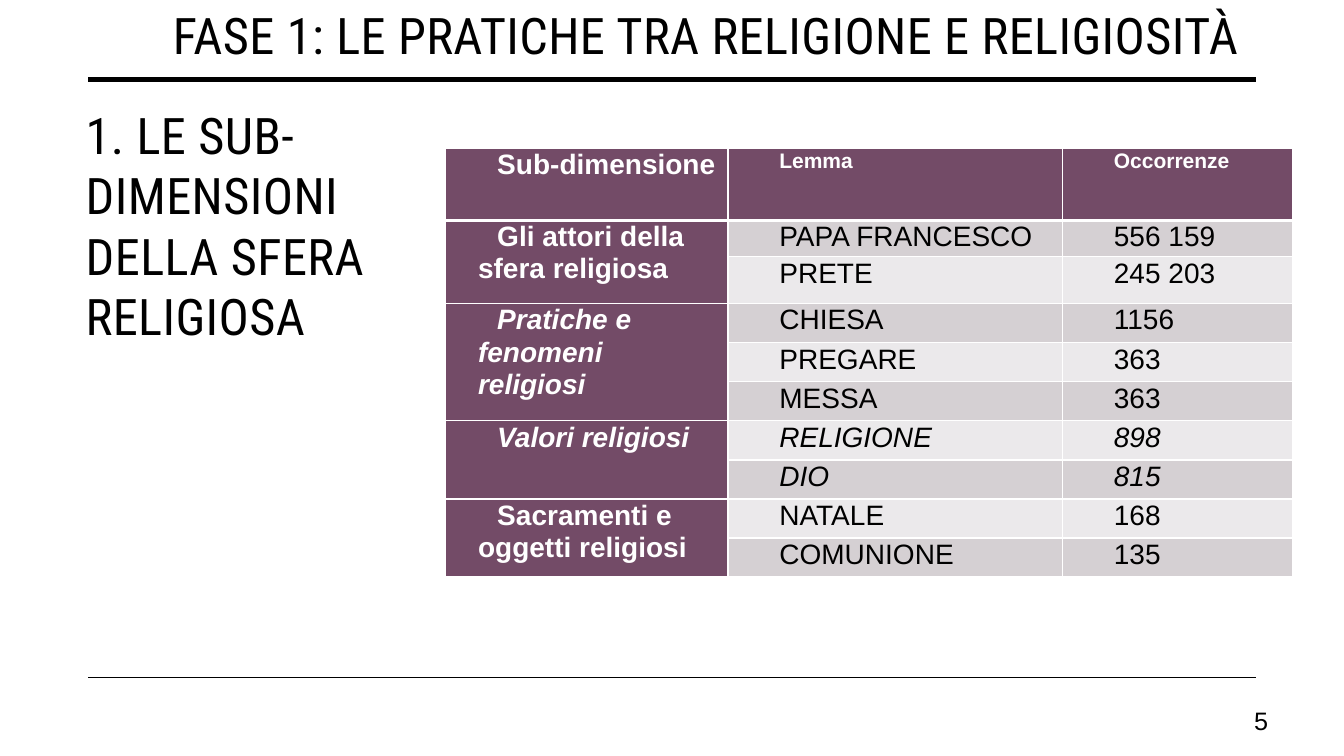
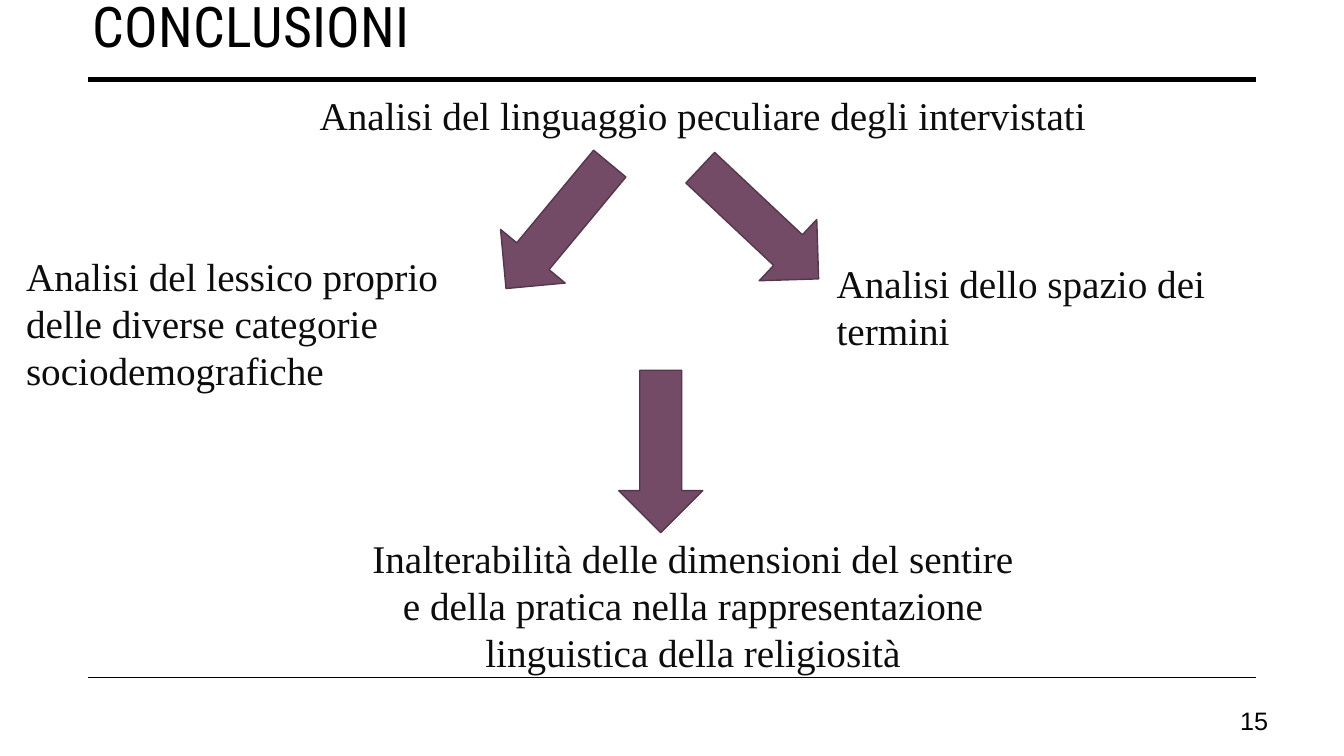
from lxml import etree
from pptx import Presentation
from pptx.dml.color import RGBColor
from pptx.enum import shapes, text
from pptx.oxml import ns
from pptx.util import Pt

COLORS = {"black": "000000", "ink": "0D0D0D", "white": "FFFFFF", "plum": "734B67",
          "plum_edge": "55374C", "band_dark": "D5D0D3", "band_light": "EBE9EB"}
HEADING, BODY, SERIF = "Roboto Condensed", "Arial", "Times New Roman"
LEFT, CENTER, RIGHT, JUSTIFY = (text.PP_ALIGN.LEFT, text.PP_ALIGN.CENTER,
                                text.PP_ALIGN.RIGHT, text.PP_ALIGN.JUSTIFY)

# y position and weight of the lines on every slide
RULES = [(57, 3.5), (484, 1)]
RULE_LEFT, RULE_RIGHT = 63, 897

HEADER = [("Sub-dimensione", 20), ("Lemma", 15), ("Occorrenze", 15)]
# sub-dimension, first cell italic, values italic, rows
GROUPS = [
    ("Gli attori della sfera religiosa", False, False,
     [("PAPA FRANCESCO", "556 159"), ("PRETE", "245 203")]),
    ("Pratiche e fenomeni religiosi", True, False,
     [("CHIESA", "1156"), ("PREGARE", "363"), ("MESSA", "363")]),
    ("Valori religiosi", True, True, [("RELIGIONE", "898"), ("DIO", "815")]),
    ("Sacramenti e oggetti religiosi", False, False,
     [("NATALE", "168"), ("COMUNIONE", "135")]),
]
COL_WIDTHS = [201.5, 239, 164]
ROW_HEIGHTS = [51.5, 26, 33.5] + [27.9] * 7
TABLE_LEFT, TABLE_TOP = 318.5, 106

STATEMENTS = [
    ("Analisi del linguaggio peculiare degli intervistati", (180, 62, 644, 41), CENTER),
    ("Analisi dello spazio dei termini", (590.5, 181.5, 299, 75), LEFT),
    ("Analisi del lessico proprio delle diverse categorie sociodemografiche",
     (11.5, 176.5, 336, 109), LEFT),
    ("Inalterabilità delle dimensioni del sentire e della pratica nella "
     "rappresentazione linguistica della religiosità", (255, 378, 480, 109), CENTER),
]
# left, top, rotation
ARROWS = [(484.5, 129.5, 43.2), (340.5, 131.5, 129.7), (414, 292.5, 90)]
ARROW_SIZE = (116, 60)


def rgb(name):
    return RGBColor.from_string(COLORS[name])


def style(p, size, font, color, align=LEFT, bold=None, italic=None):
    p.alignment = align
    f = p.font
    f.size, f.name, f.bold, f.italic = Pt(size), font, bold, italic
    f.color.rgb = rgb(color)


def write(sp, content, size, font, color, align=LEFT, anchor=text.MSO_ANCHOR.TOP):
    tf = sp.text_frame
    tf.text = content
    tf.word_wrap = True
    tf.auto_size = text.MSO_AUTO_SIZE.NONE
    tf.vertical_anchor = anchor
    style(tf.paragraphs[0], size, font, color, align)


def write_heading(sp, content, size):
    write(sp, content, size, HEADING, "black")
    for r in sp.text_frame.paragraphs[0].runs:
        r._r.get_or_add_rPr().set("spc", "30")


def add_box(s, box):
    return s.shapes.add_textbox(*map(Pt, box))


def add_slide(prs, title, size, box, number):
    """Add a slide with its title, the two shared lines and the page number."""
    s = prs.slides.add_slide(prs.slide_layouts[5])
    sp = s.shapes.title
    sp.left, sp.top, sp.width, sp.height = map(Pt, box)
    write_heading(sp, title, size)
    for y, weight in RULES:
        line = s.shapes.add_connector(shapes.MSO_CONNECTOR.STRAIGHT, Pt(RULE_LEFT),
                                      Pt(y), Pt(RULE_RIGHT), Pt(y))
        line.line.width = Pt(weight)
        line.line.color.rgb = rgb("black")
        etree.SubElement(line._element.spPr, ns.qn("a:effectLst"))
    write(add_box(s, (859.5, 500.5, 53.5, 28.5)), number, 18, BODY, "black",
          RIGHT, text.MSO_ANCHOR.MIDDLE)
    return s


def set_borders(cell, top, bottom):
    """Give the cell white borders; the side ones are 1 pt wide."""
    tc_pr = cell._tc.get_or_add_tcPr()
    widths = {"a:lnL": 1, "a:lnR": 1, "a:lnT": top, "a:lnB": bottom}
    for i, (tag, width) in enumerate(widths.items()):
        ln = etree.Element(ns.qn(tag), w=str(Pt(width)))
        fill = etree.SubElement(ln, ns.qn("a:solidFill"))
        etree.SubElement(fill, ns.qn("a:srgbClr"), val=COLORS["white"])
        tc_pr.insert(i, ln)


def fill_cell(cell, content, fill, color, size=20, align=JUSTIFY, bold=False, italic=False):
    cell.fill.solid()
    cell.fill.fore_color.rgb = rgb(fill)
    cell.margin_left = cell.margin_right = Pt(8.6)
    cell.margin_top = cell.margin_bottom = 0
    cell.text = content
    p = cell.text_frame.paragraphs[0]
    style(p, size, BODY, color, align, bold, italic)
    p.line_spacing, p.space_after = 1.03, Pt(0.6)
    p_pr = p._p.get_or_add_pPr()
    p_pr.set("marL", str(Pt(14.4)))
    p_pr.set("indent", str(Pt(13.7)))


def add_lemma_table(s):
    table = s.shapes.add_table(len(ROW_HEIGHTS), len(COL_WIDTHS), Pt(TABLE_LEFT),
                               Pt(TABLE_TOP), Pt(sum(COL_WIDTHS)),
                               Pt(sum(ROW_HEIGHTS))).table
    for col, width in zip(table.columns, COL_WIDTHS):
        col.width = Pt(width)
    for row, height in zip(table.rows, ROW_HEIGHTS):
        row.height = Pt(height)
    for c, (label, size) in enumerate(HEADER):
        fill_cell(table.cell(0, c), label, "plum", "white", size, bold=True)
    r = 1
    for name, name_italic, italic, rows in GROUPS:
        first = r
        for values in rows:
            fill_cell(table.cell(r, 0), name if r == first else "", "plum", "white",
                      align=LEFT, bold=True, italic=name_italic)
            band = "band_dark" if r % 2 else "band_light"
            for c, value in enumerate(values, 1):
                fill_cell(table.cell(r, c), value, band, "black", italic=italic)
            r += 1
        table.cell(first, 0).merge(table.cell(r - 1, 0))
    for i in range(len(ROW_HEIGHTS)):
        for c in range(len(COL_WIDTHS)):
            set_borders(table.cell(i, c), 3 if i == 1 else 1, 3 if i == 0 else 1)


def add_arrow(s, left, top, rotation):
    sp = s.shapes.add_shape(shapes.MSO_SHAPE.RIGHT_ARROW, Pt(left), Pt(top),
                            *map(Pt, ARROW_SIZE))
    sp.rotation = rotation
    sp.shadow.inherit = False
    sp.fill.solid()
    sp.fill.fore_color.rgb = rgb("plum")
    sp.line.color.rgb = rgb("plum_edge")
    sp.line.width = Pt(1)


def main():
    prs = Presentation()
    prs.slide_width, prs.slide_height = Pt(960), Pt(540)

    s = add_slide(prs, "1. LE SUB-DIMENSIONI DELLA SFERA RELIGIOSA", 36,
                  (54, 70.5, 242, 308), "5")
    add_lemma_table(s)
    write_heading(add_box(s, (116.5, -0.5, 870, 54.5)),
                  "FASE 1: LE PRATICHE TRA RELIGIONE E RELIGIOSITÀ", 36)

    s = add_slide(prs, "CONCLUSIONI", 40, (59, -9.5, 842, 56), "15")
    for content, box, align in STATEMENTS:
        write(add_box(s, box), content, 28, SERIF, "ink", align)
    for arrow in ARROWS:
        add_arrow(s, *arrow)

    prs.save("out.pptx")


if __name__ == "__main__":
    main()
